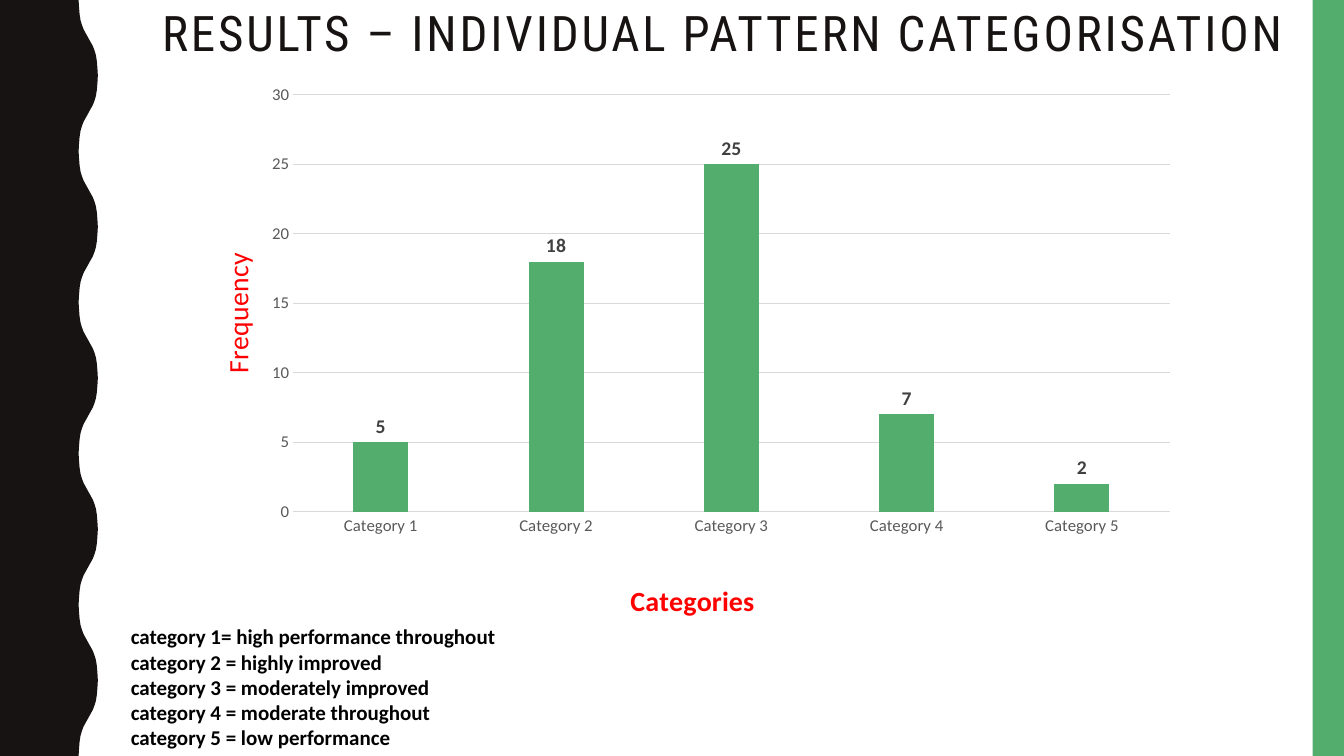
from pptx import Presentation
from pptx.chart.data import CategoryChartData
from pptx.dml.color import RGBColor
from pptx.enum.chart import XL_CHART_TYPE, XL_LABEL_POSITION, XL_TICK_MARK
from pptx.enum.shapes import MSO_SHAPE
from pptx.enum.text import MSO_ANCHOR, MSO_AUTO_SIZE
from pptx.oxml import parse_xml
from pptx.oxml.ns import nsdecls, qn
from pptx.util import Inches, Pt

WIDTH, HEIGHT = Inches(13.33), Inches(7.5)
INK = RGBColor(0x17, 0x13, 0x12)
GREEN = RGBColor(0x53, 0xAE, 0x6E)
RED = RGBColor(0xFF, 0x00, 0x00)
BLACK = RGBColor(0x00, 0x00, 0x00)
LABEL_GREY = RGBColor(0x40, 0x40, 0x40)
AXIS_GREY = RGBColor(0x59, 0x59, 0x59)
GRID_GREY = RGBColor(0xD9, 0xD9, 0xD9)

FREQUENCIES = [5, 18, 25, 7, 2]
KEY = [
    "category 1= high performance throughout",
    "category 2 = highly improved",
    "category 3 = moderately improved",
    "category 4 = moderate throughout",
    "category 5 = low performance",
]

# (depth, progress) from trough to the middle of the slope, as shares of a half wave
SLOPE = [(0, 0), (0.02, 0.09), (0.05, 0.19), (0.1, 0.27), (0.17, 0.33),
         (0.26, 0.39), (0.37, 0.44), (0.5, 0.5)]


def col(n):
    """Width of n columns on a grid of 100."""
    return round(WIDTH * n / 100)


def row(n):
    """Height of n rows on a grid of 100."""
    return round(HEIGHT * n / 100)


def box(x, y, w, h):
    return col(x), row(y), col(w), row(h)


def set_font(font, color, **values):
    for name, value in values.items():
        setattr(font, name, value)
    font.color.rgb = color


def paint(s, color):
    s.fill.solid()
    s.fill.fore_color.rgb = color
    s.line.fill.background()
    s.shadow.inherit = False


def add_wavy_band(slide, trough, crest, waves):
    rise = SLOPE + [(1 - d, 1 - t) for d, t in reversed(SLOPE[:-1])]
    wave = rise + [(d, 2 - t) for d, t in reversed(rise[:-1])]
    half = 50 / waves
    edge = [(col(trough + (crest - trough) * d), row(half * (2 * i + t)))
            for i in range(waves) for d, t in wave]
    builder = slide.shapes.build_freeform(0, 0)
    builder.add_line_segments(edge + [(0, HEIGHT)], close=True)
    paint(builder.convert_to_shape(), INK)


def add_text(slide, bounds, lines, color, spacing=None, line_spacing=None, **font):
    tf = slide.shapes.add_textbox(*bounds).text_frame
    tf.word_wrap = True
    tf.vertical_anchor = MSO_ANCHOR.TOP
    for i, line in enumerate(lines):
        p = tf.add_paragraph() if i else tf.paragraphs[0]
        p.line_spacing = line_spacing
        r = p.add_run()
        r.text = line
        set_font(r.font, color, **font)
        if spacing:
            r.font._element.set("spc", str(spacing * 100))
    return tf


def set_layout(parent, index, **shares):
    """Place a chart part by shares of the chart's size."""
    for old in parent.findall(qn("c:layout")):
        parent.remove(old)
    modes = {"xMode": "edge", "yMode": "edge"}
    if "w" in shares:
        modes = {"layoutTarget": "inner", **modes}
    items = "".join(f'<c:{k} val="{v}"/>' for k, v in {**modes, **shares}.items())
    parent.insert(index, parse_xml(
        f'<c:layout {nsdecls("c")}><c:manualLayout>{items}</c:manualLayout></c:layout>'))


def style_axis(axis, title, x, y, bold, rotation=0):
    axis.major_tick_mark = axis.minor_tick_mark = XL_TICK_MARK.NONE
    set_font(axis.tick_labels.font, AXIS_GREY, size=Pt(12), name="Calibri", bold=False)
    tf = axis.axis_title.text_frame
    r = tf.paragraphs[0].add_run()
    r.text = title
    set_font(r.font, RED, size=Pt(20), name="Calibri", bold=bold)
    tf._txBody.bodyPr.set("rot", str(rotation * 60000))
    set_layout(axis.axis_title._element, 1, x=x, y=y)


def add_frequency_chart(slide, bounds):
    data = CategoryChartData()
    data.categories = [f"Category {i}" for i in range(1, len(FREQUENCIES) + 1)]
    data.add_series("Series 1", FREQUENCIES)
    chart = slide.shapes.add_chart(XL_CHART_TYPE.COLUMN_CLUSTERED, *bounds, data).chart
    chart.has_title = chart.has_legend = False
    set_font(chart.font, BLACK, size=Pt(10), name="Calibri")
    set_layout(chart._chartSpace.chart.plotArea, 0, x=0.11, y=0.037, w=0.871, h=0.765)

    style_axis(chart.category_axis, "Categories", 0.44, 0.92, bold=True)
    style_axis(chart.value_axis, "Frequency", 0.03, 0.32, bold=False, rotation=-90)
    axis = chart.value_axis
    axis.minimum_scale, axis.maximum_scale, axis.major_unit = 0, 30, 5
    axis.format.line.fill.background()
    for line in (chart.category_axis.format.line, axis.major_gridlines.format.line):
        line.color.rgb = GRID_GREY
        line.width = Pt(0.75)

    plot = chart.plots[0]
    plot.gap_width, plot.overlap, plot.vary_by_categories = 219, -27, False
    series = plot.series[0]
    series.format.fill.solid()
    series.format.fill.fore_color.rgb = GREEN
    labels = series.data_labels
    labels.show_value = True
    labels.position = XL_LABEL_POSITION.OUTSIDE_END
    set_font(labels.font, LABEL_GREY, size=Pt(14), name="Calibri", bold=True)


def main():
    prs = Presentation()
    prs.slide_width, prs.slide_height = WIDTH, HEIGHT
    slide = prs.slides.add_slide(prs.slide_layouts[6])

    add_wavy_band(slide, trough=5.85, crest=7.28, waves=5)
    paint(slide.shapes.add_shape(MSO_SHAPE.RECTANGLE, *box(97.67, 0, 2.33, 100)), GREEN)
    add_text(slide, box(11.33, 0.53, 86.42, 13.73),
             ["RESULTS – INDIVIDUAL PATTERN CATEGORISATION"], INK,
             spacing=2, line_spacing=0.9, size=Pt(35), name="Roboto Condensed")
    add_frequency_chart(slide, box(13.58, 9.87, 74.87, 73.07))
    key = add_text(slide, box(9, 81.87, 32.56, 18.13), KEY, BLACK,
                   size=Pt(15), name="Calibri", bold=True)
    key.auto_size = MSO_AUTO_SIZE.SHAPE_TO_FIT_TEXT

    prs.save("out.pptx")


if __name__ == "__main__":
    main()
